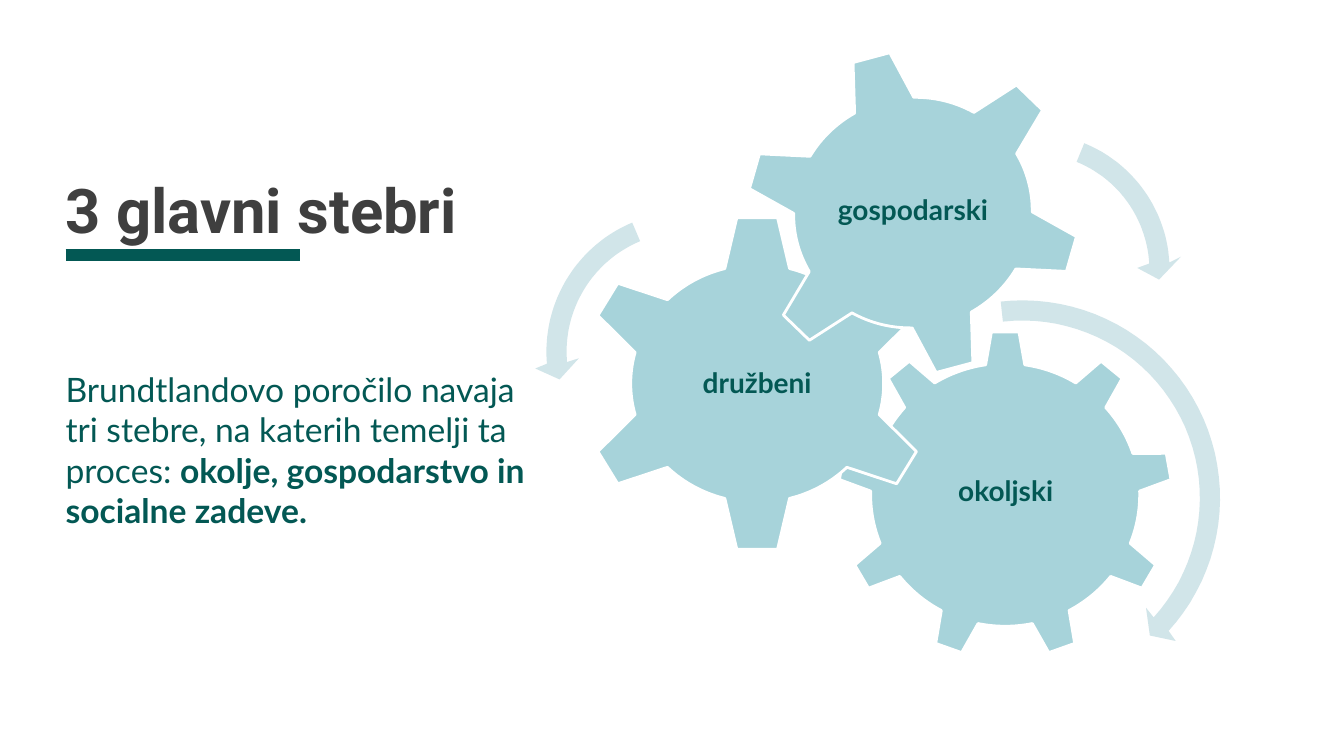
"""Build a slide on the three pillars, shown as gears with turning arrows."""
from dataclasses import dataclass
from math import cos, radians, sin

from lxml.etree import SubElement
from pptx import Presentation
from pptx.dml.color import RGBColor as RGB
from pptx.enum.shapes import MSO_CONNECTOR as LINK, MSO_SHAPE as SHAPE
from pptx.enum.text import MSO_ANCHOR as ANCHOR, MSO_AUTO_SIZE as AUTO, PP_ALIGN as ALIGN
from pptx.oxml.ns import qn
from pptx.util import Inches, Pt


@dataclass(frozen=True)
class Theme:
    ink: RGB = RGB.from_string("3F3F3F")
    green: RGB = RGB.from_string("035854")
    gear: RGB = RGB.from_string("A7D3DA")
    arrow: RGB = RGB.from_string("D1E5E9")
    white: RGB = RGB.from_string("FFFFFF")
    head: str = "Roboto"
    text: str = "Lato"
    big: Pt = Pt(44)
    mid: Pt = Pt(24)
    small: Pt = Pt(20)


theme = Theme()


def write(shape, box, runs, font, para, anchor, inset=0):
    shape.left, shape.top, shape.width, shape.height = map(Inches, box)
    frame = shape.text_frame
    look = {"word_wrap": True, "auto_size": AUTO.NONE, "vertical_anchor": anchor}
    look.update({f"margin_{side}": Inches(inset) for side in ("left", "top", "right", "bottom")})
    for name, value in look.items():
        setattr(frame, name, value)
    line = frame.paragraphs[0]
    for name, value in para.items():
        setattr(line, name, value)
    for words, bold in runs:
        run = line.add_run()
        run.text = words
        run.font.color.rgb = font["color"]
        for name, value in {"name": font["name"], "size": font["size"], "bold": bold}.items():
            setattr(run.font, name, value)


def polar(mid, radius, angle):
    turn = radians(angle)
    return tuple(round(1000 * n) for n in (mid[0] + radius * sin(turn), mid[1] - radius * cos(turn)))


deck = Presentation()
deck.slide_width, deck.slide_height = Inches(13.33), Inches(7.5)
slide = deck.slides.add_slide(deck.slide_layouts[1])
shapes = slide.shapes

rule = shapes.add_connector(LINK.STRAIGHT, Inches(0.65), Inches(2.53), Inches(2.98), Inches(2.53))
rule.line.color.rgb = theme.green
rule.line.width = Pt(8)
SubElement(rule._element.spPr, qn("a:effectLst"))

write(shapes.title, (0.65, 1.84, 5.73, 0.59), [("3 glavni stebri", True)],
      {"name": theme.head, "size": theme.big, "color": theme.ink},
      {"alignment": ALIGN.LEFT, "line_spacing": 0.8}, ANCHOR.BOTTOM)

body = slide.placeholders[1]
props = body.text_frame.paragraphs[0]._p.get_or_add_pPr()
props.set("marL", "0")
props.set("indent", "0")
SubElement(props, qn("a:buNone"))
write(body, (0.65, 3.66, 4.57, 2.02),
      [("Brundtlandovo poročilo navaja tri stebre, na katerih temelji ta proces: ", False),
       ("okolje, gospodarstvo in socialne zadeve.", True)],
      {"name": theme.text, "size": theme.mid, "color": theme.green},
      {"alignment": ALIGN.LEFT, "space_before": Pt(0)}, ANCHOR.TOP)

gears = [
    ("okoljski", SHAPE.GEAR_9, (8.31, 3.28, 3.32, 3.26), 0, (8.98, 4.04, 1.99, 1.68)),
    ("družbeni", SHAPE.GEAR_6, (5.75, 2.12, 3.52, 3.37), 0, (6.62, 2.98, 1.78, 1.66)),
    ("gospodarski", SHAPE.GEAR_6, (7.38, 0.48, 3.35, 3.26), 345, (8.05, 1.18, 2.01, 1.84)),
]
for label, kind, box, turn, place in gears:
    gear = shapes.add_shape(kind, *map(Inches, box))
    gear.rotation = turn
    gear.shadow.inherit = False
    gear.fill.solid()
    gear.fill.fore_color.rgb = theme.gear
    gear.line.color.rgb = theme.white
    gear.line.width = Pt(2)
    write(shapes.add_textbox(0, 0, 0, 0), place, [(label, True)],
          {"name": theme.text, "size": theme.small, "color": theme.green},
          {"alignment": ALIGN.CENTER, "line_spacing": 0.9}, ANCHOR.MIDDLE, 0.03)

half, barb, steps = 0.1, 0.22, 40
arrows = [
    ((10.14, 4.94), 1.86, -6.3, 132.3, 137.2, 0.7),
    ((6.81, 3.49), 1.29, -22.8, -94.9, -102.3, -1.4),
    ((10.24, 2.68), 1.26, 22.2, 86.8, 94.3, -2),
]
for mid, radius, start, end, tip, skew in arrows:
    sweep = [start + (end - start) * i / steps for i in range(steps + 1)]
    points = [polar(mid, radius + half, angle) for angle in sweep]
    points += [polar(mid, radius + barb, end + skew), polar(mid, radius, tip),
               polar(mid, radius - barb, end - skew)]
    points += [polar(mid, radius - half, angle) for angle in reversed(sweep)]
    path = shapes.build_freeform(*points[0], scale=Inches(1) / 1000)
    path.add_line_segments(points[1:], close=True)
    arrow = path.convert_to_shape()
    arrow.shadow.inherit = False
    arrow.fill.solid()
    arrow.fill.fore_color.rgb = theme.arrow
    arrow.line.fill.background()

deck.save("out.pptx")
